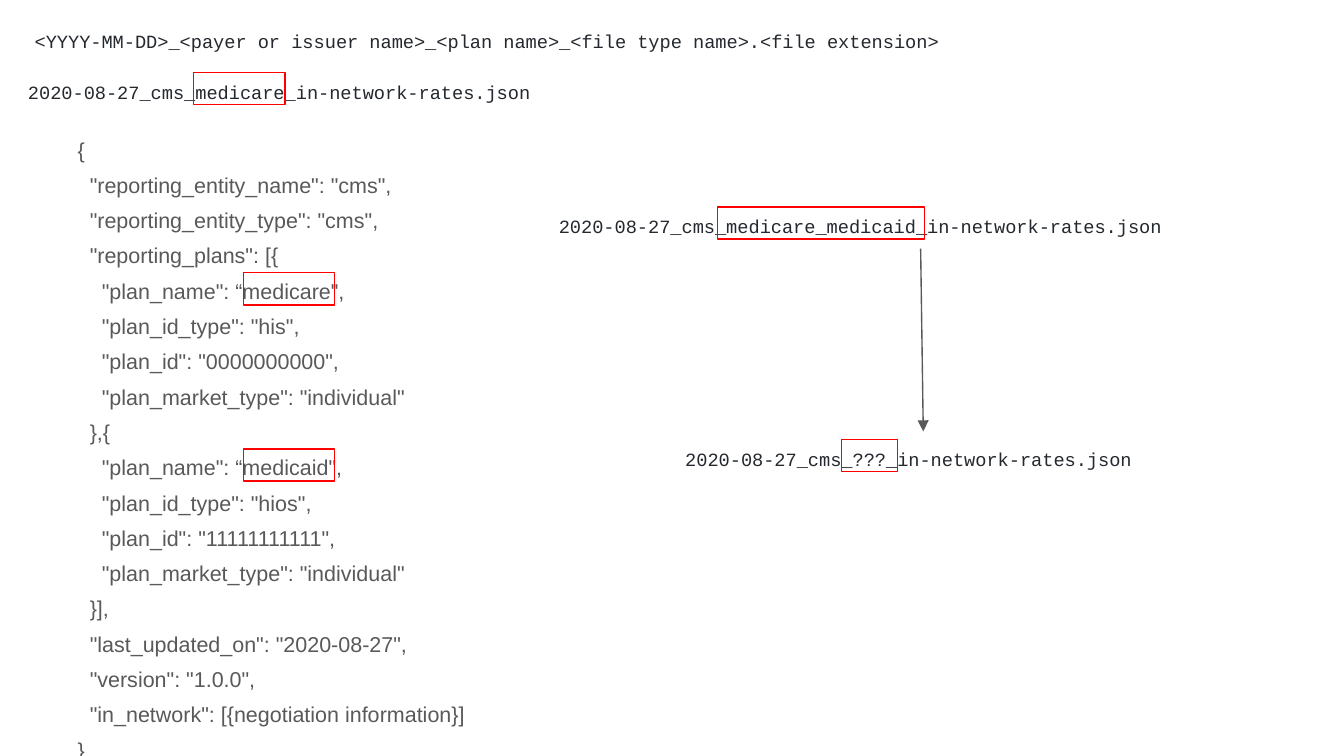
from lxml.etree import SubElement
from pptx import Presentation
from pptx.dml.color import RGBColor
from pptx.enum.shapes import MSO_CONNECTOR as CONN, MSO_SHAPE as SHAPE
from pptx.oxml.ns import qn
from pptx.util import Inches, Pt

GRAY = RGBColor(0x59, 0x59, 0x59)
INK = RGBColor(0x24, 0x29, 0x2F)
RED = RGBColor(0xFF, 0x00, 0x00)

# (indent level, text)
JSON_LINES = [
    (0, '{'),
    (1, '"reporting_entity_name": "cms",'),
    (1, '"reporting_entity_type": "cms",'),
    (1, '"reporting_plans": [{'),
    (2, '"plan_name": “medicare",'),
    (2, '"plan_id_type": "his",'),
    (2, '"plan_id": "0000000000",'),
    (2, '"plan_market_type": "individual"'),
    (1, '},{'),
    (2, '"plan_name": “medicaid",'),
    (2, '"plan_id_type": "hios",'),
    (2, '"plan_id": "11111111111",'),
    (2, '"plan_market_type": "individual"'),
    (1, '}],'),
    (1, '"last_updated_on": "2020-08-27",'),
    (1, '"version": "1.0.0",'),
    (1, '"in_network": [{negotiation information}]'),
    (0, '}'),
]

# left, top, width, text
FILE_NAMES = [
    (0.11, 0.48, 4.09, "2020-08-27_cms_medicare_in-network-rates.json"),
    (4.06, 1.48, 5.58, "2020-08-27_cms_medicare_medicaid_in-network-rates.json"),
    (5, 3.21, 3.71, "2020-08-27_cms_???_in-network-rates.json"),
]

# left, top, width
HIGHLIGHTS = [
    (1.44, 0.54, 0.68),
    (1.81, 2.03, 0.68),
    (1.81, 3.34, 0.68),
    (5.34, 1.54, 1.54),
    (6.26, 3.27, 0.42),
]


class SlideBuilder:
    MONO, SANS = "Courier New", "Arial"
    INDENT = 0.09

    def __init__(self, slide):
        self.s = slide

    def _text_frame(self, x, y, w, h):
        tf = self.s.shapes.add_textbox(*map(Inches, (x, y, w, h))).text_frame
        tf.word_wrap = True
        tf.margin_left = tf.margin_right = Inches(0.1)
        tf.margin_top = tf.margin_bottom = Inches(0.1)
        return tf

    def _write(self, p, text, font, size, color):
        p.text = text
        f = p.runs[0].font
        f.name, f.size = font, Pt(size)
        f.color.rgb = color

    def file_name(self, x, y, w, text, spacing=1.15, after=12):
        p = self._text_frame(x, y, w, 0.37).paragraphs[0]
        self._write(p, text, self.MONO, 10, INK)
        p.line_spacing, p.space_after = spacing, Pt(after)

    def code(self, x, y, w, h, lines):
        tf = self._text_frame(x, y, w, h)
        for i, (level, text) in enumerate(lines):
            p = tf.add_paragraph() if i else tf.paragraphs[0]
            self._write(p, text, self.SANS, 11.5, GRAY)
            p.line_spacing = 0.5
            p.space_before = Pt(12 if i else 0)
            p._p.get_or_add_pPr().set("marL", str(Inches(self.INDENT * level)))

    def highlight(self, x, y, w):
        sp = self.s.shapes.add_shape(SHAPE.RECTANGLE, *map(Inches, (x, y, w, 0.24)))
        sp.shadow.inherit = False
        sp.fill.background()
        sp.line.color.rgb = RED
        sp.line.width = Pt(0.75)

    def arrow(self, x1, y1, x2, y2):
        c = self.s.shapes.add_connector(CONN.STRAIGHT, *map(Inches, (x1, y1, x2, y2)))
        c.line.color.rgb = GRAY
        c.line.width = Pt(0.75)
        SubElement(c.line._get_or_add_ln(), qn("a:tailEnd"), type="triangle")
        SubElement(c._element.spPr, qn("a:effectLst"))


def main():
    prs = Presentation()
    prs.slide_width = Inches(10)
    prs.slide_height = Inches(10 * 9 / 16)
    b = SlideBuilder(prs.slides.add_slide(prs.slide_layouts[6]))

    b.code(0.48, 1, 3.34, 4.63, JSON_LINES)
    *first_names, last_name = FILE_NAMES
    b.file_name(*first_names[0])
    b.file_name(0.16, 0.14, 8.2,
                "<YYYY-MM-DD>_<payer or issuer name>_<plan name>_"
                "<file type name>.<file extension>", spacing=1, after=0)
    b.file_name(*first_names[1])
    b.arrow(6.85, 1.85, 6.87, 3.21)
    b.file_name(*last_name)
    for box in HIGHLIGHTS:
        b.highlight(*box)

    prs.save("out.pptx")


if __name__ == "__main__":
    main()
